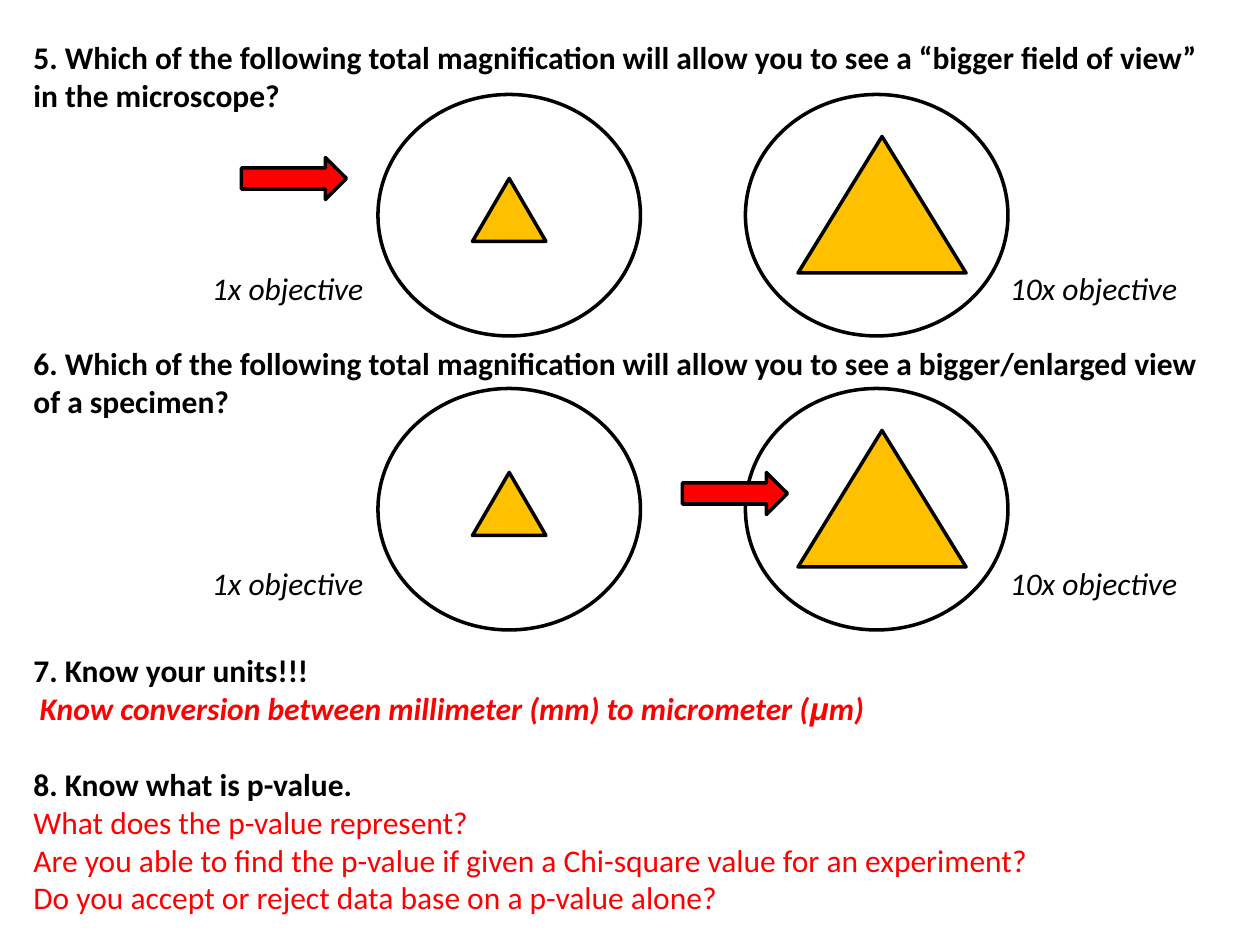
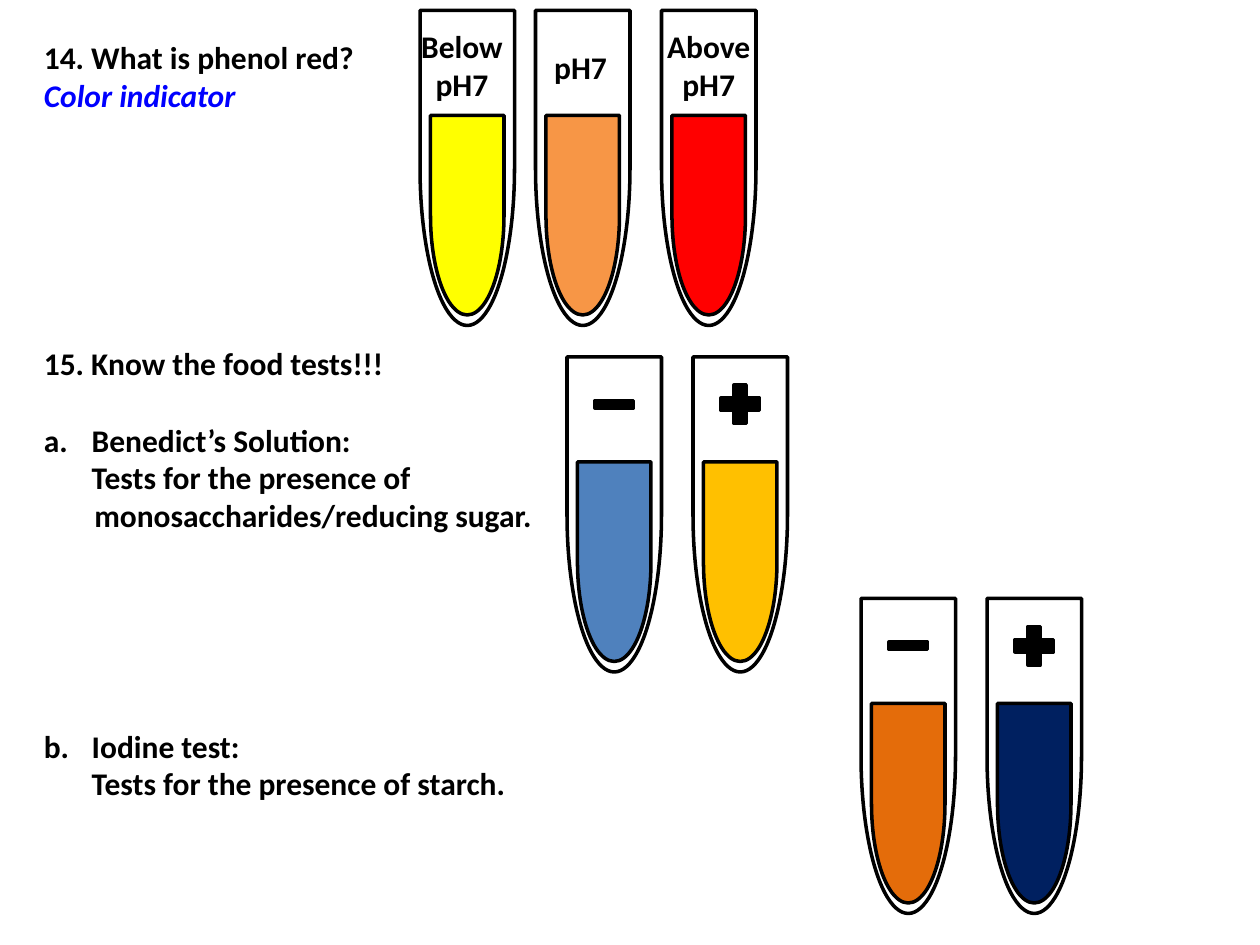
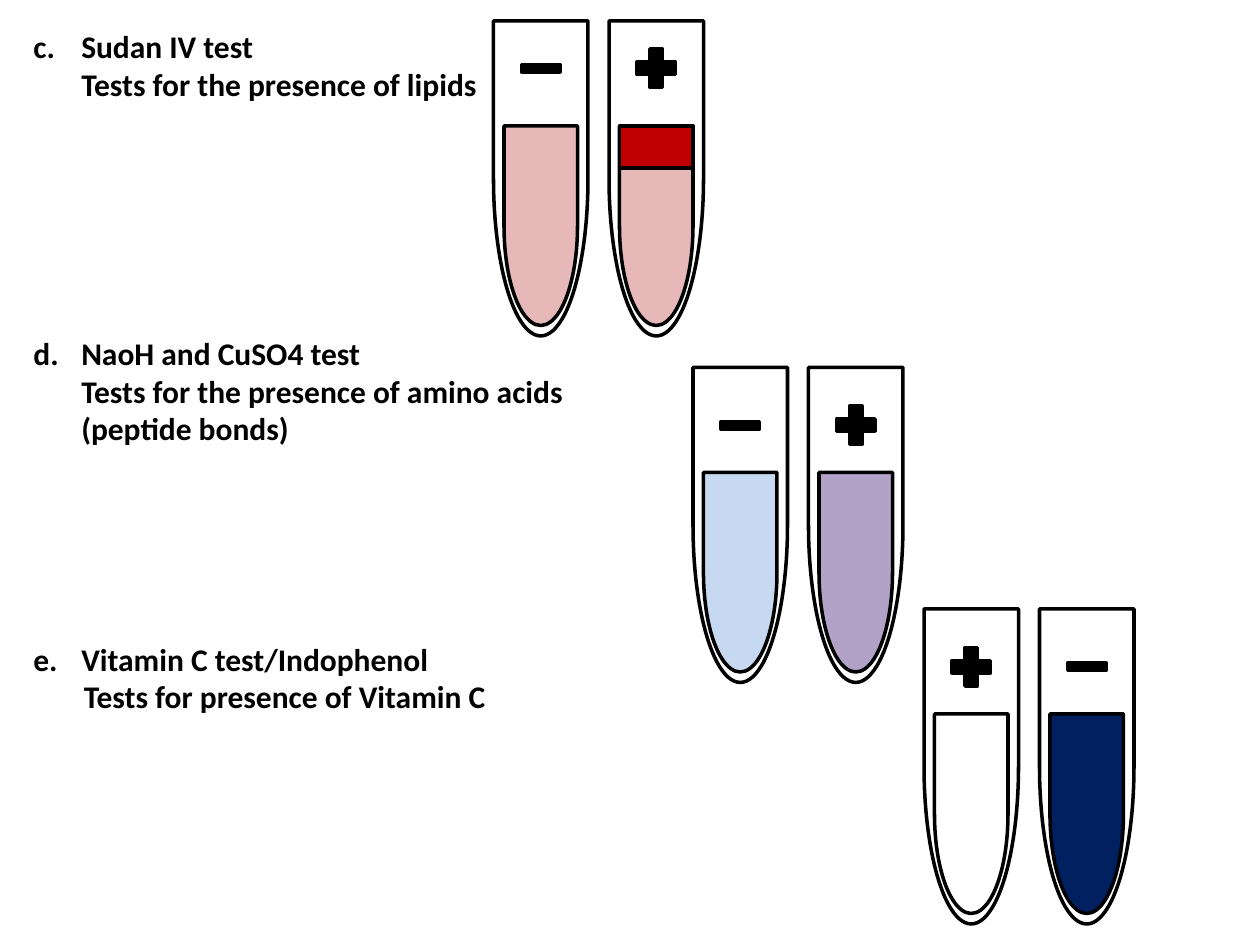
"""Build three review slides on microscopes and food tests."""
from lxml import etree
from pptx import Presentation
from pptx.dml.color import RGBColor
from pptx.enum.shapes import MSO_SHAPE
from pptx.enum.text import MSO_AUTO_SIZE, PP_ALIGN
from pptx.oxml.ns import qn
from pptx.util import Inches, Pt

DISH = MSO_SHAPE.FLOWCHART_CONNECTOR
CONE = MSO_SHAPE.ISOSCELES_TRIANGLE
ARROW = MSO_SHAPE.RIGHT_ARROW
TUBE = MSO_SHAPE.FLOWCHART_DELAY
PLUS = MSO_SHAPE.MATH_PLUS
MINUS = MSO_SHAPE.MATH_MINUS
RECT = MSO_SHAPE.RECTANGLE
GROW = MSO_AUTO_SIZE.SHAPE_TO_FIT_TEXT
CENTER = PP_ALIGN.CENTER

BLACK = RGBColor(0, 0, 0)
WHITE = RGBColor(0xFF, 0xFF, 0xFF)
RED = RGBColor(0xFF, 0, 0)
BLUE = RGBColor(0, 0, 0xFF)
GOLD = RGBColor(0xFF, 0xC0, 0)
YELLOW = RGBColor(0xFF, 0xFF, 0)
PEACH = RGBColor(0xF7, 0x96, 0x46)
STEEL = RGBColor(0x4F, 0x81, 0xBD)
RUST = RGBColor(0xE4, 0x6C, 0x0A)
NAVY = RGBColor(0, 0x20, 0x60)
PINK = RGBColor(0xE6, 0xB9, 0xB8)
DARK = RGBColor(0xC0, 0, 0)
SKY = RGBColor(0xC6, 0xD9, 0xF1)
LILAC = RGBColor(0xB3, 0xA2, 0xC7)

UNIT = Inches(1) // 12
LINE = 22
HANG = 0.38
NUDGE = 0.05

STYLES = {
    "head": (BLACK, True, False),
    "key": (RED, True, True),
    "ask": (RED, False, False),
    "hint": (BLUE, True, True),
    "label": (BLACK, False, True),
}

# Paragraphs: style, blank lines above, left indent, list number, runs.
SCOPE = [
    ("head", 0, 0, 0, "5. Which of the following total magnification will allow you "
     "to see a “bigger field of view” in the microscope?"),
    ("head", 6, 0, 0, "6. Which of the following total magnification will allow you "
     "to see a bigger/enlarged view of a specimen?"),
    ("head", 6, 0, 0, "7. Know your units!!!"),
    ("key", 0, NUDGE, 0, "Know conversion between millimeter (mm) to micrometer (",
     "μ", "m)"),
    ("head", 1, 0, 0, "8. Know what is p-value."),
    ("ask", 0, 0, 0, "What does the p-value represent?"),
    ("ask", 0, 0, 0, "Are you able to find the p-value if given a Chi-square value "
     "for an experiment?"),
    ("ask", 0, 0, 0, "Do you accept or reject data base on a p-value alone?"),
]
FOOD = [
    ("head", 0, 0, 0, "14. What is phenol red?"),
    ("hint", 0, 0, 0, "Color indicator"),
    ("head", 6, 0, 0, "15. Know the food tests!!!"),
    ("head", 1, HANG, 1, "Benedict’s Solution:"),
    ("head", 0, HANG, 0, "Tests for the presence of"),
    ("head", 0, 0.4, 0, "monosaccharides/reducing sugar."),
    ("head", 5, HANG, 2, "Iodine test:"),
    ("head", 0, HANG, 0, "Tests for the presence of starch."),
]
MORE = [
    ("head", 0, HANG, 3, "Sudan IV test"),
    ("head", 0, HANG, 0, "Tests for the presence of lipids"),
    ("head", 6, HANG, 4, "NaoH and CuSO4 test"),
    ("head", 0, HANG, 0, "Tests for the presence of amino acids"),
    ("head", 0, HANG, 0, "(peptide bonds)"),
    ("head", 5, HANG, 5, "Vitamin C test/Indophenol"),
    ("head", 0, 0.4, 0, "Tests for presence of Vitamin C"),
]

# Rows of dishes: top, label top, arrow place.
VIEWS = [(9, 25, (23, 15)), (37, 53.15, (65, 45))]
# Dishes: left, cone box within the dish, label left, label width, label.
LENSES = [
    (36, (9, 8, 7, 6), 19, 17, "1x objective"),
    (71, (5, 4, 16, 13), 95, 18.7, "10x objective"),
]

# Racks: top, drop of the signs, tubes as left, liquid, sign.
FOOD_RACKS = [
    (1, 0, [(40, YELLOW, None), (51, PEACH, None), (63, RED, None)]),
    (34, 2, [(54, STEEL, MINUS), (66, GOLD, PLUS)]),
    (57, 2, [(82, RUST, MINUS), (94, NAVY, PLUS)]),
]
MORE_RACKS = [
    (2, 2, [(47, PINK, MINUS), (58, PINK, PLUS)]),
    (35, 3, [(66, SKY, MINUS), (77, LILAC, PLUS)]),
    (58, 3, [(88, WHITE, PLUS), (99, NAVY, MINUS)]),
]
TAGS = [
    ((37, 2, 14, 8.5), CENTER, [("head", 0, 0, 0, "Below"), ("head", 0, 0, 0, "pH7")]),
    ((51, 4, 10, 4.8), None, [("head", 0, NUDGE, 0, "pH7")]),
    ((61, 2, 13, 8.5), CENTER, [("head", 0, 0, 0, "Above pH7")]),
]


def grid(*box):
    return [round(n * UNIT) for n in box]


def put(slide, kind, box, fill=None, turn=0):
    x, y, w, h = box
    if turn:
        x, y, w, h = x + (w - h) / 2, y + (h - w) / 2, h, w
    shape = slide.shapes.add_shape(kind, *grid(x, y, w, h))
    shape.rotation = turn
    shape.shadow.inherit = False
    shape.line.color.rgb = BLACK
    shape.line.width = Pt(2)
    if fill is None:
        shape.fill.background()
    else:
        shape.fill.solid()
        shape.fill.fore_color.rgb = fill


def write(slide, box, paras, align=None, wrap=True):
    frame = slide.shapes.add_textbox(*grid(*box)).text_frame
    frame.word_wrap = wrap
    frame.auto_size = GROW
    for i, (style, gap, left, num, *runs) in enumerate(paras):
        para = frame.add_paragraph() if i else frame.paragraphs[0]
        para.alignment = align
        if gap:
            para.space_before = Pt(gap * LINE)
        props = para._p.get_or_add_pPr()
        if left:
            props.set("marL", str(Inches(left)))
        if num:
            props.set("indent", str(-Inches(left)))
            etree.SubElement(props, qn("a:buAutoNum"),
                             type="alphaLcPeriod", startAt=str(num))
        for text in runs:
            run = para.add_run()
            run.text = text
            font = run.font
            font.name = "Arial" if text == "μ" else "Calibri"
            font.size = Pt(18)
            font.color.rgb, font.bold, font.italic = STYLES[style]


def view(slide, top, low, spot):
    for left, (dx, dy, w, h), at, wide, text in LENSES:
        put(slide, DISH, (left, top, 25, 23))
        put(slide, CONE, (left + dx, top + dy, w, h), GOLD)
        write(slide, (at, low, wide, 4.8), [("label", 0, 0, 0, text)], wrap=False)
    put(slide, ARROW, (*spot, 10, 4), RED)


def rack(slide, top, drop, tubes):
    for left, fill, sign in tubes:
        put(slide, TUBE, (left, top, 9, 30), turn=90)
        put(slide, TUBE, (left + 1, top + 10, 7, 19), fill, 90)
        if sign == PLUS:
            put(slide, PLUS, (left + 2, top + drop, 5, 5), BLACK)
        elif sign == MINUS:
            put(slide, MINUS, (left + 2, top + drop + 1, 5, 3), BLACK)


def main():
    deck = Presentation()
    deck.slide_width, deck.slide_height = Inches(10), Inches(7.5)
    scope, food, more = [deck.slides.add_slide(deck.slide_layouts[6]) for _ in range(3)]

    write(scope, (2, 3, 115, 84.8), SCOPE)
    for row in VIEWS:
        view(scope, *row)

    write(food, (3, 3, 114, 74), FOOD)
    for row in FOOD_RACKS:
        rack(food, *row)
    for box, align, paras in TAGS:
        write(food, box, paras, align)

    write(more, (2, 2, 116, 70.3), MORE)
    for row in MORE_RACKS:
        rack(more, *row)
    put(more, RECT, (59, 12, 7, 4), DARK)

    deck.save("out.pptx")


if __name__ == "__main__":
    main()
